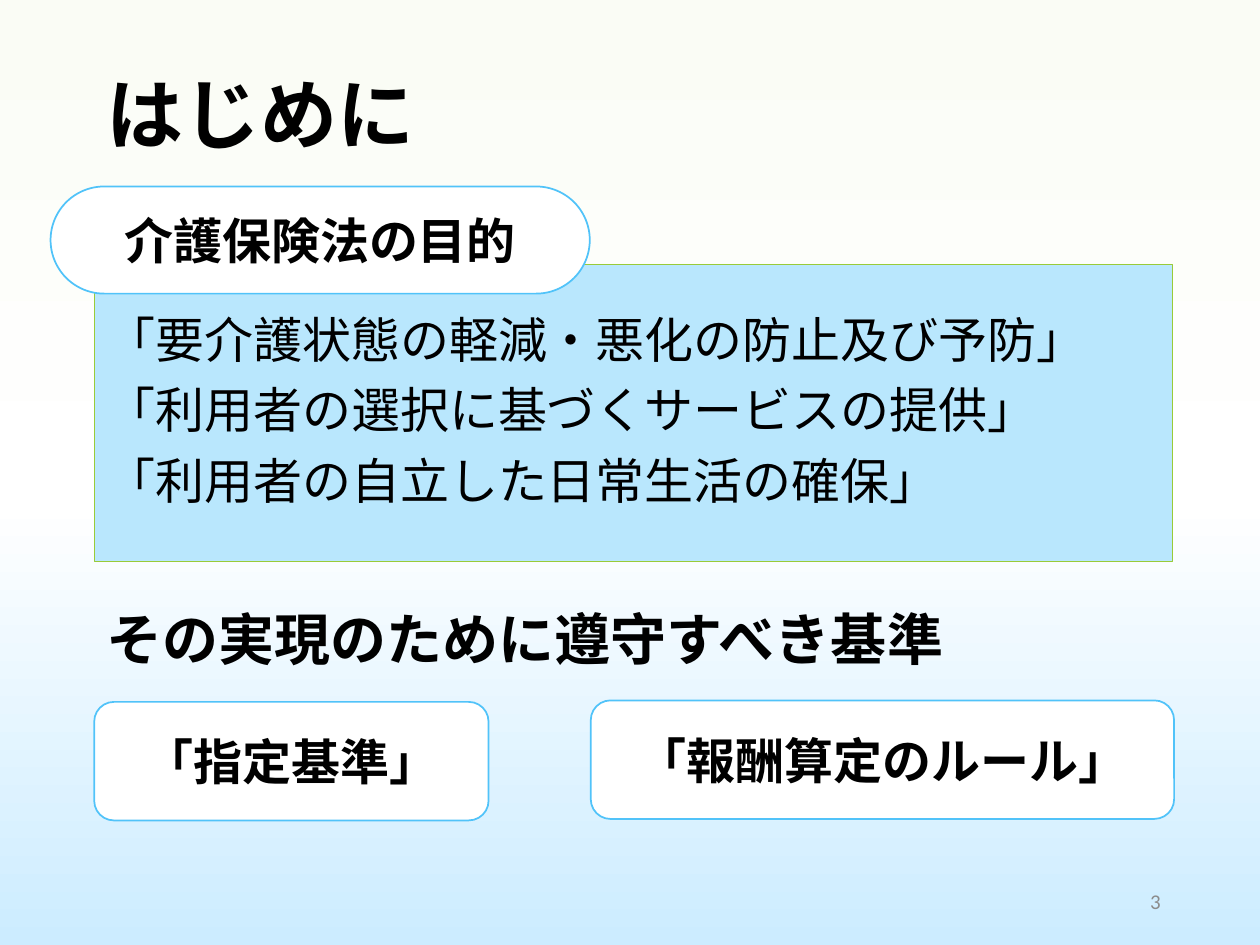
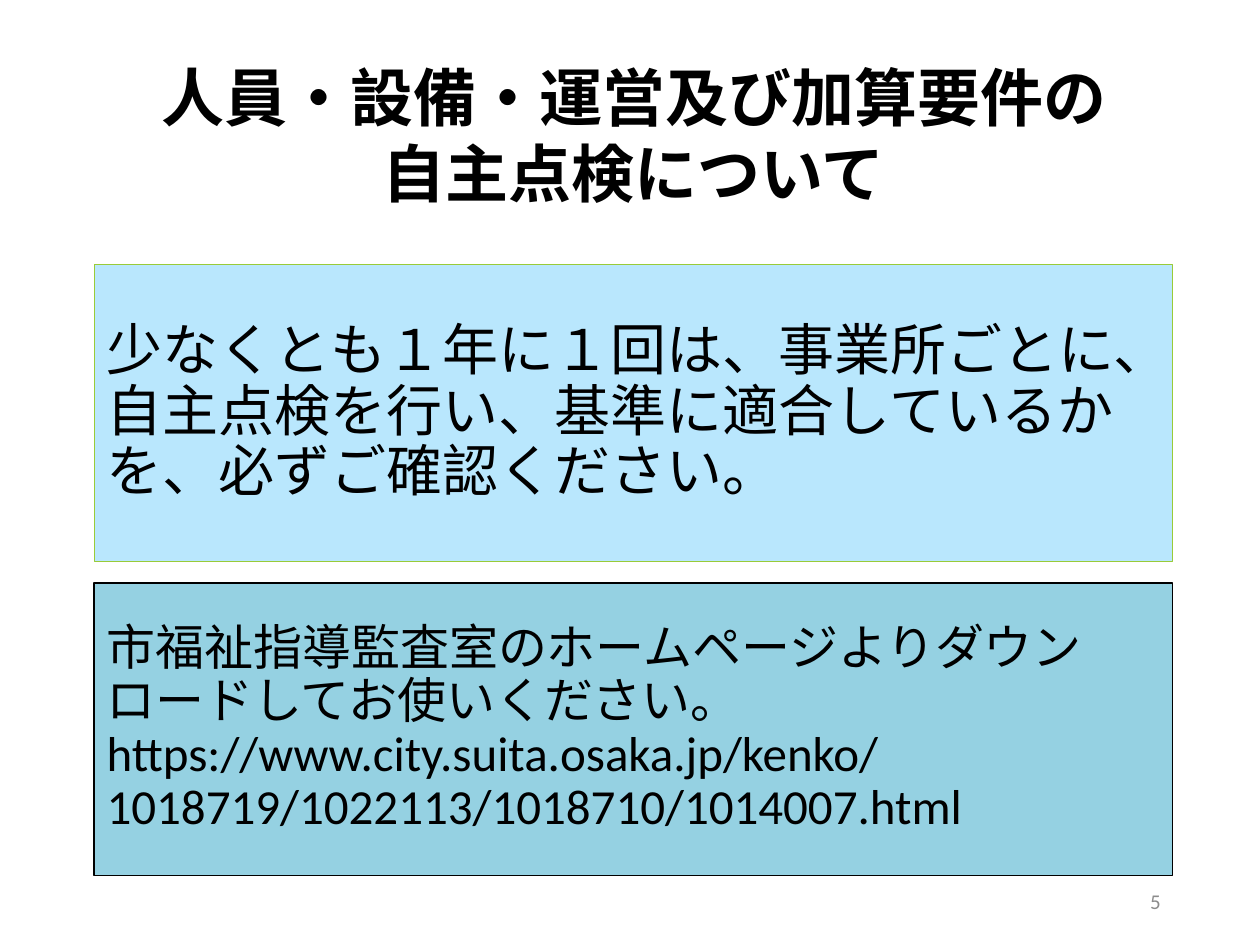
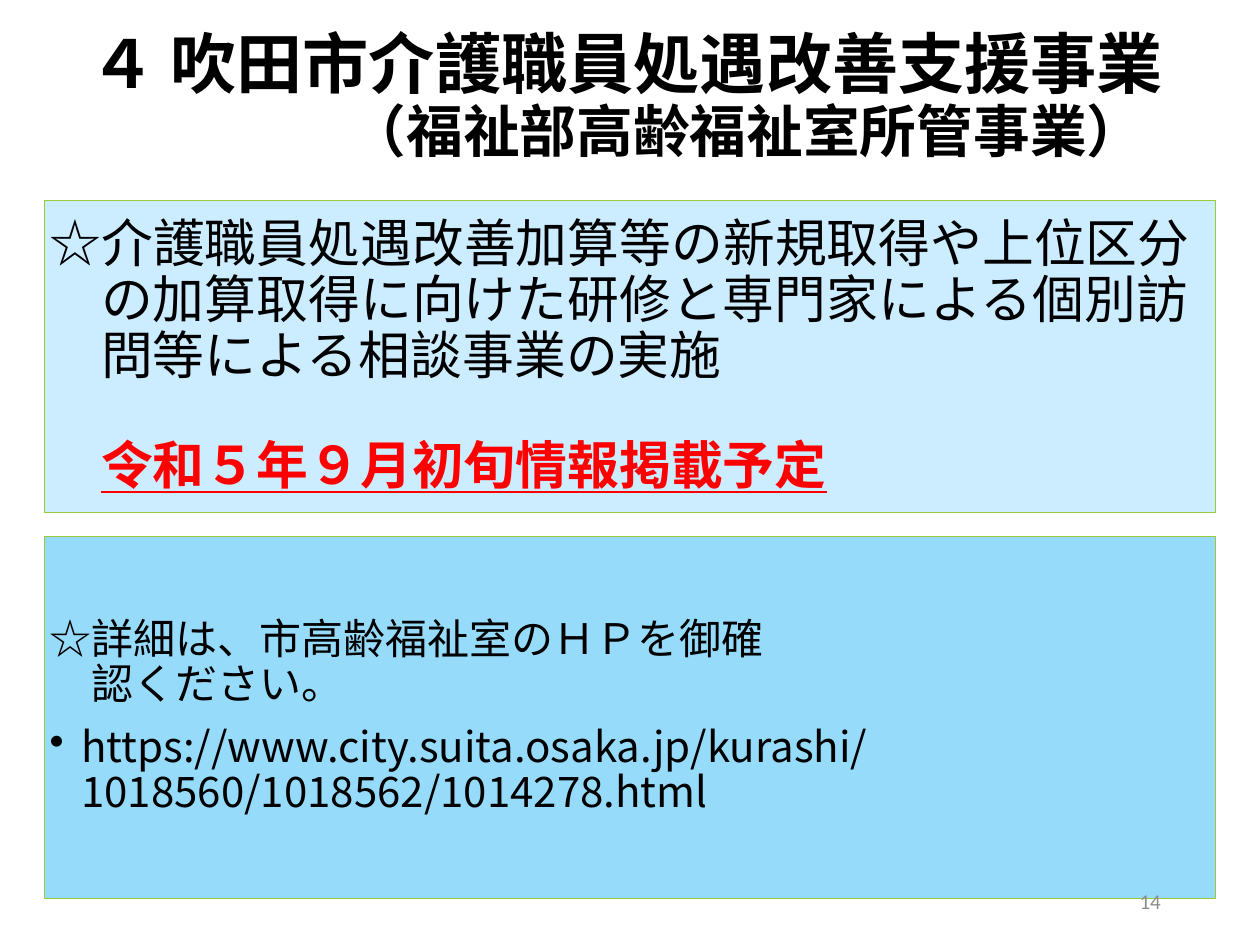
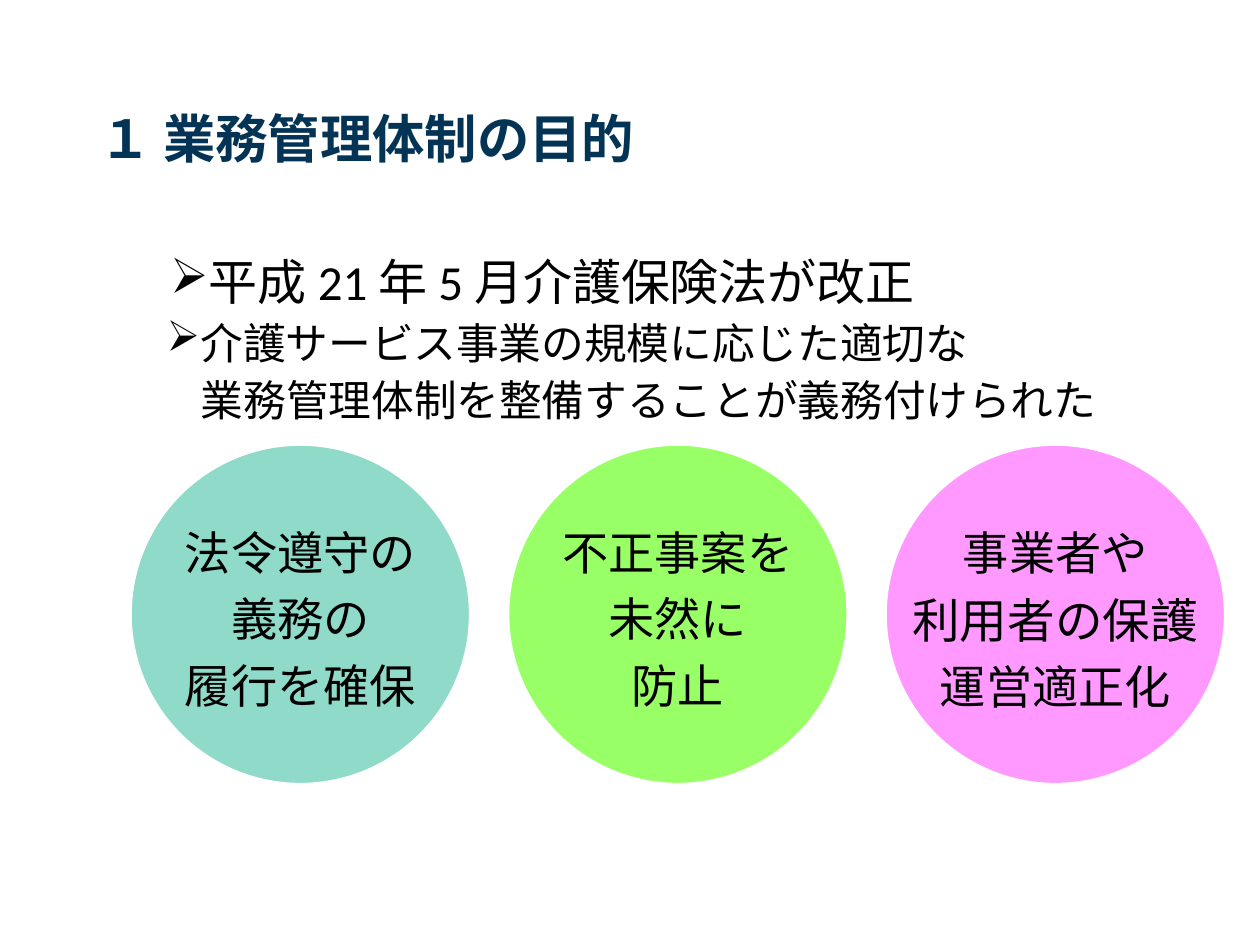
from copy import deepcopy

from lxml import etree
from pptx import Presentation
from pptx.dml.color import RGBColor
from pptx.enum.shapes import MSO_SHAPE
from pptx.enum.text import MSO_ANCHOR, PP_ALIGN
from pptx.oxml.ns import qn
from pptx.util import Cm, Pt

RECT, ROUND, OVAL = MSO_SHAPE.RECTANGLE, MSO_SHAPE.ROUNDED_RECTANGLE, MSO_SHAPE.OVAL
MIDDLE, TOP = MSO_ANCHOR.MIDDLE, MSO_ANCHOR.TOP
LEFT, CENTER, RIGHT, JUSTIFY = PP_ALIGN.LEFT, PP_ALIGN.CENTER, PP_ALIGN.RIGHT, PP_ALIGN.JUSTIFY
LATIN, CJK = "Calibri", "Noto Sans CJK JP"

COLORS = {
    "text": "000000", "number": "8C8C8C", "heading": "033355", "alert": "FF0000",
    "white": "FFFFFF", "cream": "FAFCF5", "pale": "CCECFF", "panel": "B9E7FD",
    "sky": "97DBFB", "teal": "95D1E2", "outline": "51C3F9", "edge": "99CB38",
    "mint": "8FDAC8", "lime": "99FF66", "pink": "FF99FF",
}
BACKDROP = [(0, "cream"), (0.53, "white"), (1, "pale")]

DEFAULTS = {"size": 28, "name": LATIN, "bold": False, "underline": False, "color": "text",
            "alignment": LEFT, "line_spacing": 0.9, "space_before": 0,
            "indent": (0, 0), "bullet": None}
TITLE = {"bold": True, "size": 44}
BODY = {"space_before": 10}
BUTTON = {"bold": True, "alignment": CENTER, "line_spacing": 1.0}
NUMBER = {"size": 12, "color": "number", "alignment": RIGHT, "line_spacing": 1.0}
POINT = {"name": CJK, "size": 24.4, "line_spacing": 0.8, "space_before": 9.4}
LABEL = {"name": CJK, "size": 26.4, "alignment": CENTER, "space_before": 9.4}

WIDE_INSETS = (0.25, 0.13)
NARROW_INSETS = (0.1, 0.1)
SLIM_INSETS = (0.18, 0.08)

MAIN_PANEL = (1.9, 5.33, 21.74, 5.99)
NUMBER_BOX = (17.93, 17.65, 5.72, 1.02)


def rgb(color):
    """Return the named colour."""
    return RGBColor.from_string(COLORS[color])


def write_paragraph(paragraph, text, style):
    """Fill one paragraph with text in the given style."""
    values = {**DEFAULTS, **style}
    for key in ("alignment", "line_spacing"):
        setattr(paragraph, key, values[key])
    paragraph.space_before = Pt(values["space_before"])
    properties = paragraph._p.get_or_add_pPr()
    for key, length in zip(("marL", "indent"), values["indent"]):
        properties.set(key, str(int(Cm(length))))
    if values["bullet"]:
        etree.SubElement(properties, qn("a:buChar"), char=values["bullet"])
    else:
        etree.SubElement(properties, qn("a:buNone"))
    run = paragraph.add_run()
    run.text = text
    for key in ("name", "bold", "underline"):
        setattr(run.font, key, values[key])
    run.font.size = Pt(values["size"])
    run.font.color.rgb = rgb(values["color"])
    etree.SubElement(run._r.get_or_add_rPr(), qn("a:ea"), typeface=CJK)


def write(holder, lines, style, anchor=MIDDLE, insets=WIDE_INSETS):
    """Write lines, each a string or a (string, overrides) pair, into a shape."""
    frame = holder.text_frame
    across, down = map(Cm, insets)
    settings = {"word_wrap": True, "vertical_anchor": anchor, "margin_left": across,
                "margin_right": across, "margin_top": down, "margin_bottom": down}
    for key, value in settings.items():
        setattr(frame, key, value)
    for index, line in enumerate(lines):
        text, extra = (line, {}) if isinstance(line, str) else line
        paragraph = frame.add_paragraph() if index else frame.paragraphs[0]
        write_paragraph(paragraph, text, {**style, **extra})


def add_text(slide, box, lines, style, **layout):
    """Add a plain text area."""
    write(slide.shapes.add_textbox(*map(Cm, box)), lines, style, **layout)


def add_panel(slide, box, fill, edge=None, width=0.5, kind=RECT, rounding=None):
    """Add a filled shape without a shadow and return it."""
    panel = slide.shapes.add_shape(kind, *map(Cm, box))
    panel.shadow.inherit = False
    panel.fill.solid()
    panel.fill.fore_color.rgb = rgb(fill)
    if edge:
        panel.line.color.rgb = rgb(edge)
        panel.line.width = Pt(width)
    else:
        panel.line.fill.background()
    if rounding is not None:
        panel.adjustments[0] = rounding
    return panel


def add_button(slide, box, text, rounding=None):
    """Add a white rounded box with a bold centred caption."""
    button = add_panel(slide, box, "white", "outline", 1, ROUND, rounding)
    write(button, [text], BUTTON)


def add_number(slide, number):
    """Add the slide number at the lower right."""
    add_text(slide, NUMBER_BOX, [str(number)], NUMBER)


def paint_backdrop(slide):
    """Give the slide a vertical gradient."""
    fill = slide.background.fill
    fill.gradient()
    fill.gradient_angle = 270
    first = next(slide.element.iter(qn("a:gs")))
    first.addnext(deepcopy(first))
    for stop, (position, color) in zip(fill.gradient_stops, BACKDROP):
        stop.position = position
        stop.color.rgb = rgb(color)


def build_introduction(slide):
    """Build the purpose of the law and the standards to follow."""
    paint_backdrop(slide)
    add_text(slide, (1.9, 0.84, 22.22, 3.1), ["はじめに"], TITLE)
    purposes = add_panel(slide, MAIN_PANEL, "panel", "edge")
    write(purposes, ["「要介護状態の軽減・悪化の防止及び予防」",
                     "「利用者の選択に基づくサービスの提供」",
                     "「利用者の自立した日常生活の確保」"], BODY)
    add_number(slide, 3)
    add_button(slide, (1.02, 3.76, 10.87, 2.16), "介護保険法の目的", 0.5)
    add_button(slide, (1.9, 14.15, 7.95, 2.39), "「指定基準」")
    add_button(slide, (11.91, 14.12, 11.76, 2.39), "「報酬算定のルール」")
    add_text(slide, (1.9, 11.76, 21.74, 2.36), ["その実現のために遵守すべき基準"],
             {**TITLE, "size": 32})


def build_self_check(slide):
    """Build the request for a yearly self-check."""
    request = add_panel(slide, MAIN_PANEL, "panel", "edge")
    write(request, ["少なくとも１年に１回は、事業所ごとに、自主点検を行い、"
                    "基準に適合しているかを、必ずご確認ください。"], {**BODY, "size": 32})
    add_number(slide, 5)
    heading = add_panel(slide, (1.22, 0.51, 23.11, 4.39), "white", kind=ROUND, rounding=0.5)
    write(heading, ["人員・設備・運営及び加算要件の", "自主点検について"], {**BUTTON, "size": 36})
    download = add_panel(slide, (1.9, 11.76, 21.74, 5.89), "teal", "text", 1)
    write(download, ["市福祉指導監査室のホームページよりダウンロードしてお使いください。",
                     "https://www.city.suita.osaka.jp/kenko/1018719/1022113/1018710/1014007.html"],
          {})


def build_support_project(slide):
    """Build the support project with its notice and details."""
    add_text(slide, (1.55, 0.43, 22.58, 3.1),
             ["４ 吹田市介護職員処遇改善支援事業",
              ("（福祉部高齢福祉室所管事業）", {"size": 32.4, "indent": (5.25, 0)})],
             {**TITLE, "size": 37.8})
    details = add_panel(slide, (0.9, 10.82, 23.6, 7.29), "sky", "edge")
    write(details,
          [("☆詳細は、市高齢福祉室のＨＰを御確", BODY),
           ("認ください。", {"indent": (0.85, 0)}),
           ("https://www.city.suita.osaka.jp/kurashi/1018560/1018562/1014278.html",
            {**BODY, "name": CJK, "alignment": JUSTIFY, "bullet": "•",
             "indent": (0.64, -0.64)})],
          {"size": 24}, insets=NARROW_INSETS)
    add_number(slide, 14)
    notice = add_panel(slide, (0.9, 4.04, 23.6, 6.3), "pale", "edge")
    hanging = {"indent": (1.04, 0)}
    write(notice,
          ["☆介護職員処遇改善加算等の新規取得や上位区分",
           ("の加算取得に向けた研修と専門家による個別訪", hanging),
           ("問等による相談事業の実施", hanging),
           ("令和５年９月初旬情報掲載予定",
            {**hanging, "color": "alert", "bold": True, "underline": True,
             "space_before": 31})],
          {"size": 29.6}, insets=NARROW_INSETS)


def add_goal(slide, box, fill, lines, label_width):
    """Add a circle with a label centred on it."""
    left, top, diameter, _ = box
    add_panel(slide, box, fill, "white", 1, OVAL)
    label = (left + (diameter - label_width) / 2, top + 1.65, label_width, 4.45)
    add_text(slide, label, lines, LABEL, anchor=TOP, insets=SLIM_INSETS)


def build_management_purpose(slide):
    """Build the purpose of the management system with its three goals."""
    add_text(slide, (1.75, 1.02, 21.89, 3.68), ["１ 業務管理体制の目的"],
             {**TITLE, "name": CJK, "size": 29.9, "color": "heading"})
    arrow = {"bullet": "➢", "indent": (0.62, -0.62)}
    add_text(slide, (3.18, 5.08, 21.06, 1.93), ["平成 21 年 5 月介護保険法が改正"],
             {**BODY, **arrow}, anchor=TOP)
    add_text(slide, (3.18, 6.5, 21.06, 2.18),
             [("介護サービス事業の規模に応じた適切な", arrow),
              ("業務管理体制を整備することが義務付けられた", {"indent": (0, 0.69)})],
             POINT, anchor=TOP, insets=SLIM_INSETS)
    goals = [("mint", ["法令遵守の", "義務の", "履行を確保"], 5.16),
             ("lime", ["不正事案を", "未然に", "防止"], 5.16),
             ("pink", ["事業者や", ("利用者の保護", {"size": 27.2}), "運営適正化"], 7.75)]
    for index, goal in enumerate(goals):
        add_goal(slide, (2.64 + 7.61 * index, 8.97, 6.83, 6.83), *goal)


def main():
    """Build the four slides and save them."""
    deck = Presentation()
    deck.slide_width, deck.slide_height = Cm(25.4), Cm(19.05)
    for build in (build_introduction, build_self_check,
                  build_support_project, build_management_purpose):
        build(deck.slides.add_slide(deck.slide_layouts[6]))
    deck.save("out.pptx")


if __name__ == "__main__":
    main()
